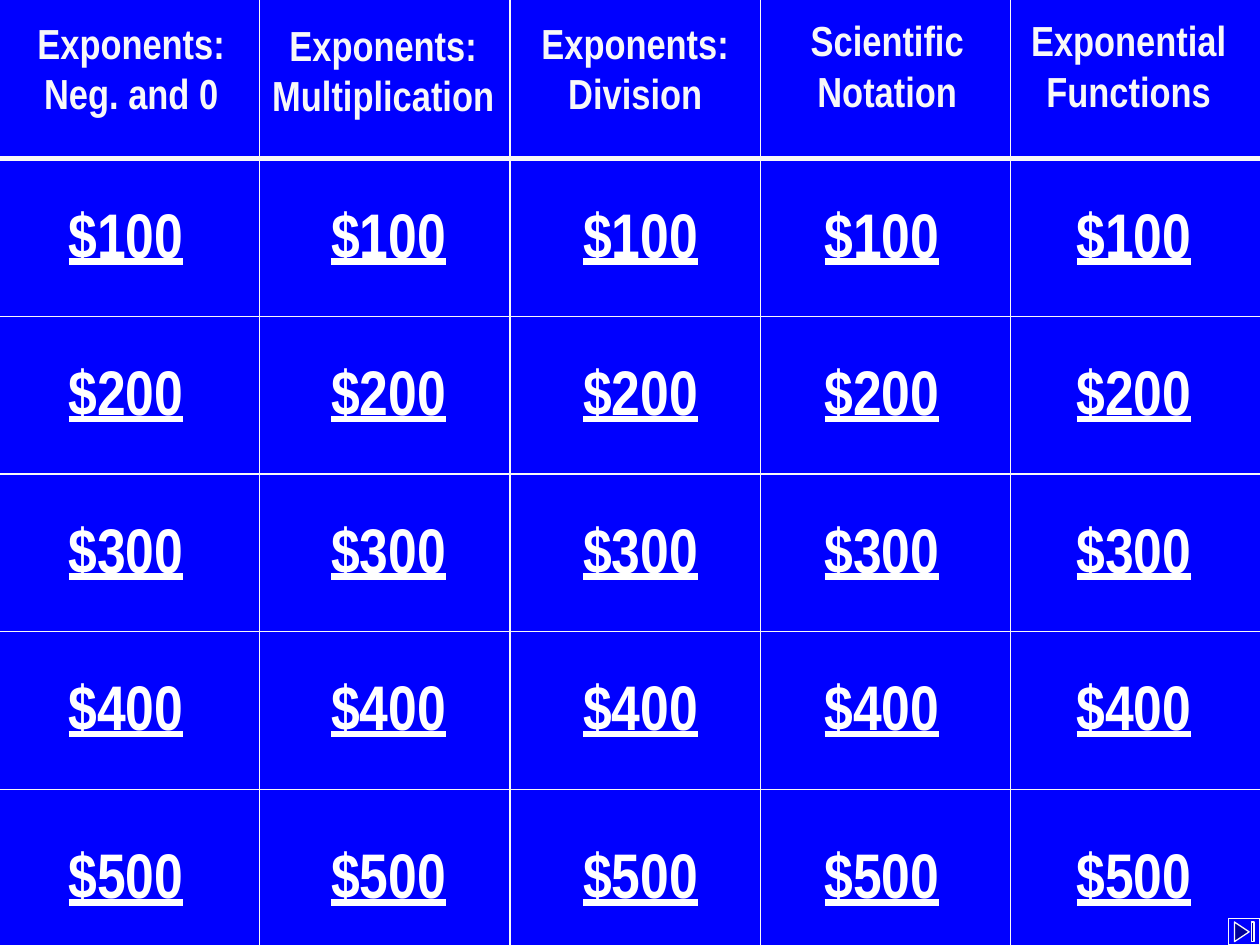
"""Build a five-category quiz board on exponents."""
from pptx import Presentation
from pptx.dml.color import RGBColor as Rgb
from pptx.enum.shapes import MSO_CONNECTOR as Connector, MSO_SHAPE as Shape
from pptx.enum.text import MSO_ANCHOR as Anchor, MSO_AUTO_SIZE as AutoSize, PP_ALIGN as Align
from pptx.oxml.ns import qn
from pptx.util import Pt

COLORS = {"board": "0000FF", "grid": "F8F8F8", "amount": "FFFFFF"}
WIDTH, HEIGHT = 720, 540

deck = Presentation()
deck.slide_width, deck.slide_height = Pt(WIDTH), Pt(HEIGHT)
page = deck.slides.add_slide(deck.slide_layouts[6])
page.background.fill.solid()
page.background.fill.fore_color.rgb = Rgb.from_string(COLORS["board"])


def add_text(text, left, top, width, height, size, color, anchor=Anchor.TOP, underline=False):
    box = page.shapes.add_textbox(Pt(left), Pt(top), Pt(width), Pt(height))
    frame = box.text_frame
    frame.word_wrap = True
    frame.auto_size = AutoSize.SHAPE_TO_FIT_TEXT
    frame.vertical_anchor = anchor
    para = frame.paragraphs[0]
    para.alignment = Align.CENTER
    span = para.add_run()
    span.text = text
    span.font.name = "Arial Narrow"
    span.font.size = Pt(size)
    span.font.bold = True
    span.font.underline = underline
    span.font.color.rgb = Rgb.from_string(COLORS[color])


def add_rule(x1, y1, x2, y2, weight=0.75):
    rule = page.shapes.add_connector(Connector.STRAIGHT, Pt(x1), Pt(y1), Pt(x2), Pt(y2))
    rule.line.color.rgb = Rgb.from_string(COLORS["grid"])
    rule.line.width = Pt(weight)
    properties = rule._element.spPr
    properties.append(properties.makeelement(qn("a:effectLst"), {}))


for column in range(4):
    x = 148.4 + 143 * column
    add_rule(x, 0, x, HEIGHT)
for row in range(5):
    y = 90.6 + 90.1 * row
    add_rule(0, y, WIDTH, y, weight=0.75 if row else 3)

categories = [
    ("Exponents: Neg. and 0", 0, 6),
    ("Exponents: Multiplication", 144, 7),
    ("Exponents: Division", 288, 6),
    ("Scientific Notation", 432, 4.5),
    ("Exponential Functions", 570, 4.5),
]
for title, left, top in categories:
    add_text(title, left, top, 150, 65.5, size=24, color="grid", anchor=Anchor.MIDDLE)

amounts = {"$100": 108, "$200": 198, "$300": 288, "$400": 378, "$500": 474}
for amount, top in amounts.items():
    for left in (0, 150, 294, 432, 576):
        add_text(amount, left, top, 144, 50.5, size=36, color="amount", underline=True)

button = page.shapes.add_shape(Shape.ACTION_BUTTON_END, Pt(702), Pt(525), Pt(18), Pt(15))
button.shadow.inherit = False
button.fill.solid()
button.fill.fore_color.rgb = Rgb.from_string(COLORS["board"])
button.line.color.rgb = Rgb.from_string(COLORS["grid"])
button.line.width = Pt(0.75)

deck.save("out.pptx")
